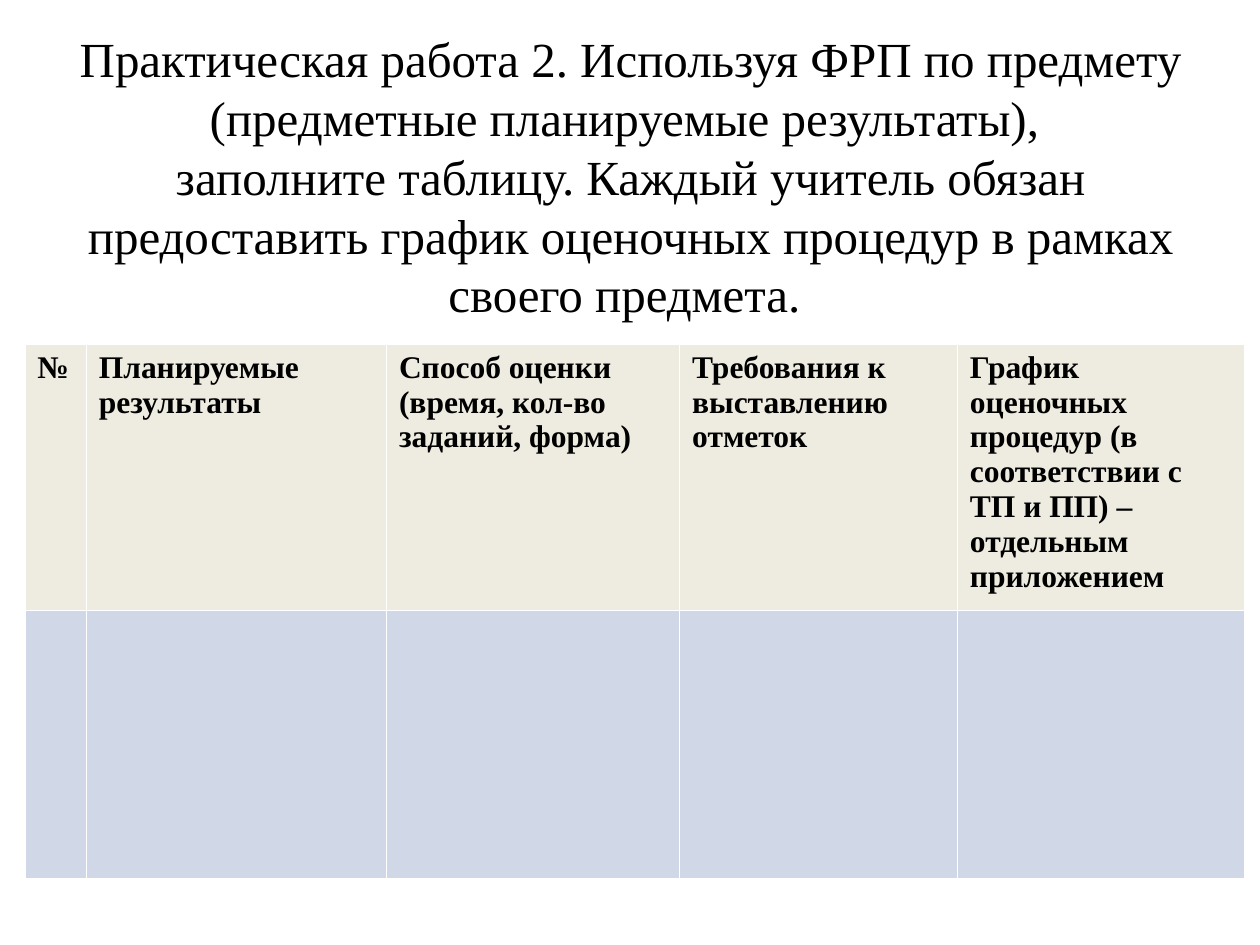
from pptx import Presentation
from pptx import util as u
from pptx.dml.color import RGBColor
from pptx.enum import text

TITLE = (
    "Практическая работа 2. Используя ФРП по предмету "
    "(предметные планируемые результаты), \v"
    "заполните таблицу. Каждый учитель обязан предоставить "
    "график оценочных процедур в рамках своего предмета. "
)
COLUMNS = [
    ("№", 1.24),
    ("Планируемые результаты", 6.05),
    ("Способ оценки (время, кол-во заданий, форма)", 5.91),
    ("Требования к выставлению отметок", 5.6),
    ("График оценочных процедур (в соответствии с ТП и ПП) – отдельным приложением", 5.8),
]
ROW_HEIGHTS = [5.38, 5.4]
FONT = "Times New Roman"
BLACK = RGBColor(0x00, 0x00, 0x00)
ROW_FILLS = [RGBColor(0xEE, 0xEC, 0xE1), RGBColor(0xD0, 0xD8, 0xE8)]


def format_paragraph(paragraph, size, bold):
    font = paragraph.font
    font.name, font.size, font.bold = FONT, u.Pt(size), bold
    font.color.rgb = BLACK


def add_title(slide):
    title = slide.shapes.title
    title.left, title.top = u.Cm(0.71), u.Cm(0.76)
    title.width, title.height = u.Cm(24), u.Cm(5.56)
    frame = title.text_frame
    frame.text = TITLE
    frame.word_wrap = True
    frame.auto_size = text.MSO_AUTO_SIZE.NONE
    frame.vertical_anchor = text.MSO_ANCHOR.MIDDLE
    paragraph = frame.paragraphs[0]
    paragraph.alignment = text.PP_ALIGN.CENTER
    format_paragraph(paragraph, 28, False)


def add_assessment_table(slide):
    width = sum(column_width for _, column_width in COLUMNS)
    table = slide.shapes.add_table(
        len(ROW_HEIGHTS), len(COLUMNS),
        u.Cm(0.5), u.Cm(6.93), u.Cm(width), u.Cm(sum(ROW_HEIGHTS)),
    ).table
    for row, height, color in zip(table.rows, ROW_HEIGHTS, ROW_FILLS):
        row.height = u.Cm(height)
        for cell in row.cells:
            cell.fill.solid()
            cell.fill.fore_color.rgb = color
    for index, (heading, column_width) in enumerate(COLUMNS):
        table.columns[index].width = u.Cm(column_width)
        cell = table.cell(0, index)
        cell.text = heading
        format_paragraph(cell.text_frame.paragraphs[0], 18, True)


def main():
    presentation = Presentation()
    presentation.slide_width, presentation.slide_height = u.Cm(25.4), u.Cm(19.05)
    slide = presentation.slides.add_slide(presentation.slide_layouts[5])
    add_title(slide)
    add_assessment_table(slide)
    presentation.save("out.pptx")


if __name__ == "__main__":
    main()
